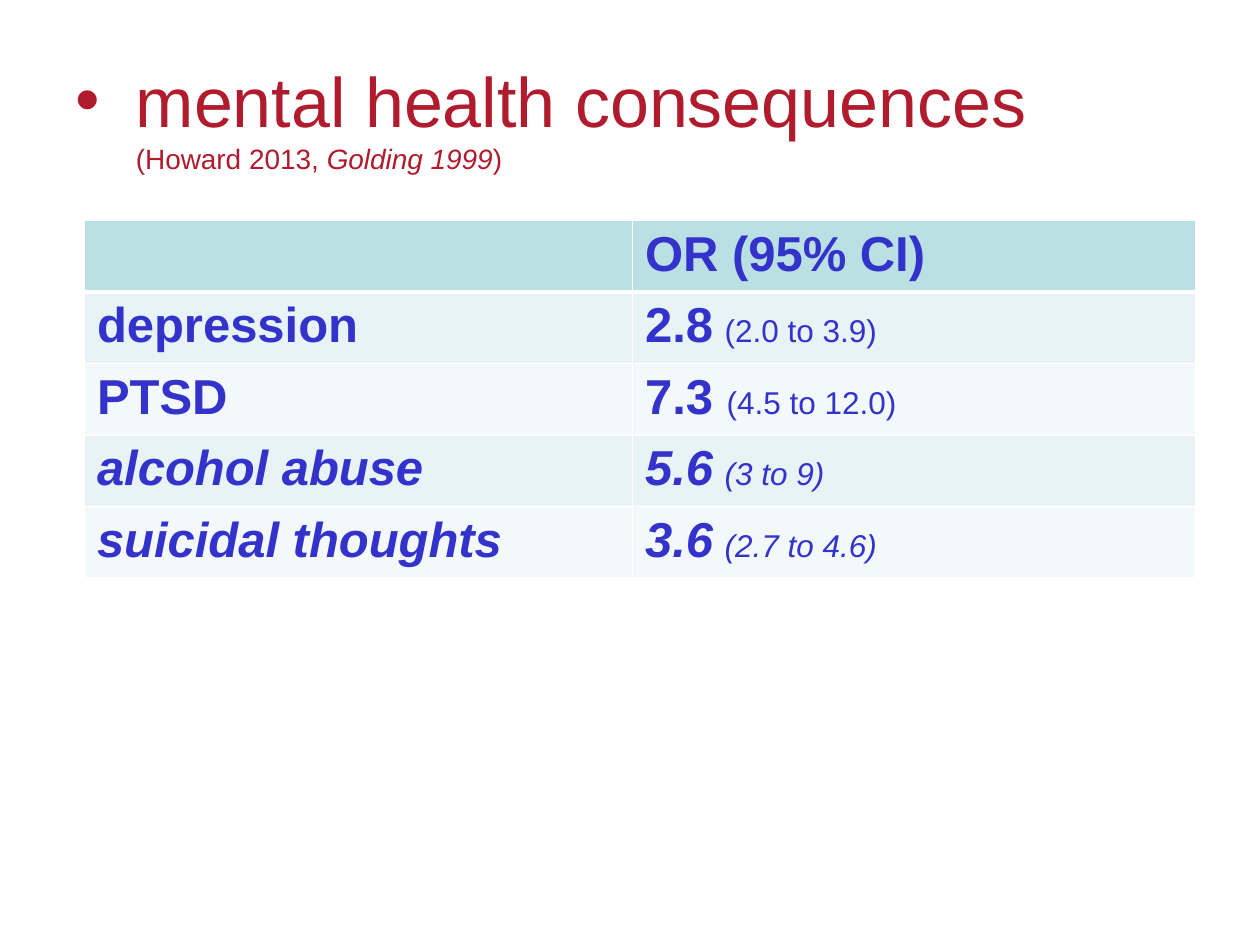
"""Build a slide with a bulleted title and a table of odds ratios."""
from lxml.etree import SubElement
from pptx import Presentation
from pptx.dml.color import RGBColor
from pptx.enum.text import MSO_ANCHOR
from pptx.oxml.ns import qn
from pptx.util import Inches, Pt

THEME = {
    "font": "Arial", "title": "B01C2E", "text": "3333CC", "border": "FFFFFF",
    "header": "BBE0E3", "bands": ("E7F3F4", "F3F9FA"),
    "title_size": 40, "cite_size": 16, "cell_size": 28, "gap_size": 24, "ci_size": 18,
}
TITLE = "mental health consequences"
CITATION = [("(Howard 2013, ", False), ("Golding 1999", True), (")", False)]
HEADER = "OR (95% CI)"
ROWS = [
    ("depression", "2.8", "(2.0 to 3.9)", False, THEME["gap_size"]),
    ("PTSD", "7.3", "(4.5 to 12.0)", False, THEME["cell_size"]),
    ("alcohol abuse", "5.6", "(3 to 9)", True, THEME["gap_size"]),
    ("suicidal thoughts", "3.6", "(2.7 to 4.6)", True, THEME["gap_size"]),
]
COLS = (4.35, 4.47)
ROW_HEIGHT = 0.5


def add_run(p, text, size=THEME["cell_size"], color=THEME["text"], bold=False, italic=False):
    r = p.add_run()
    r.text = text
    r.font.name = THEME["font"]
    r.font.size = Pt(size)
    r.font.bold = bold
    r.font.italic = italic
    r.font.color.rgb = RGBColor.from_string(color)


def add_title(s):
    tf = s.shapes.add_textbox(Inches(0.5), Inches(0.3), Inches(9), Inches(1.25)).text_frame
    tf.word_wrap = True
    tf.vertical_anchor = MSO_ANCHOR.MIDDLE
    p = tf.paragraphs[0]
    pPr = p._p.get_or_add_pPr()
    pPr.set("marL", str(Inches(0.48)))
    pPr.set("indent", str(Inches(-0.48)))
    SubElement(pPr, qn("a:buFont"), typeface=THEME["font"])
    SubElement(pPr, qn("a:buChar"), char="•")
    add_run(p, TITLE, size=THEME["title_size"], color=THEME["title"])
    p.add_line_break()
    for text, italic in CITATION:
        add_run(p, text, size=THEME["cite_size"], color=THEME["title"], italic=italic)


def style_cell(cell, row):
    tcPr = cell._tc.get_or_add_tcPr()
    widths = {"lnL": 1, "lnR": 1, "lnT": 3 if row == 1 else 1, "lnB": 3 if row == 0 else 1}
    for side, width in widths.items():
        ln = SubElement(tcPr, qn(f"a:{side}"), w=str(Pt(width)))
        SubElement(SubElement(ln, qn("a:solidFill")), qn("a:srgbClr"), val=THEME["border"])
    color = THEME["bands"][(row - 1) % 2] if row else THEME["header"]
    cell.fill.solid()
    cell.fill.fore_color.rgb = RGBColor.from_string(color)


def add_odds_table(s):
    n = len(ROWS) + 1
    table = s.shapes.add_table(n, len(COLS), Inches(0.67), Inches(1.75),
                               Inches(sum(COLS)), Inches(n * ROW_HEIGHT)).table
    for col, width in zip(table.columns, COLS):
        col.width = Inches(width)
    for i in range(n):
        for j in range(len(COLS)):
            style_cell(table.cell(i, j), i)
    add_run(table.cell(0, 1).text_frame.paragraphs[0], HEADER, bold=True)
    for i, (condition, ratio, ci, italic, gap) in enumerate(ROWS, 1):
        label, value = (table.cell(i, j).text_frame.paragraphs[0] for j in range(2))
        add_run(label, condition, bold=True, italic=italic)
        add_run(value, ratio, bold=True, italic=italic)
        add_run(value, " ", size=gap, italic=italic)
        add_run(value, ci, size=THEME["ci_size"], italic=italic)


def main():
    prs = Presentation()
    prs.slide_width, prs.slide_height = Inches(10), Inches(7.5)
    s = prs.slides.add_slide(prs.slide_layouts[6])
    add_title(s)
    add_odds_table(s)
    prs.save("out.pptx")


if __name__ == "__main__":
    main()
